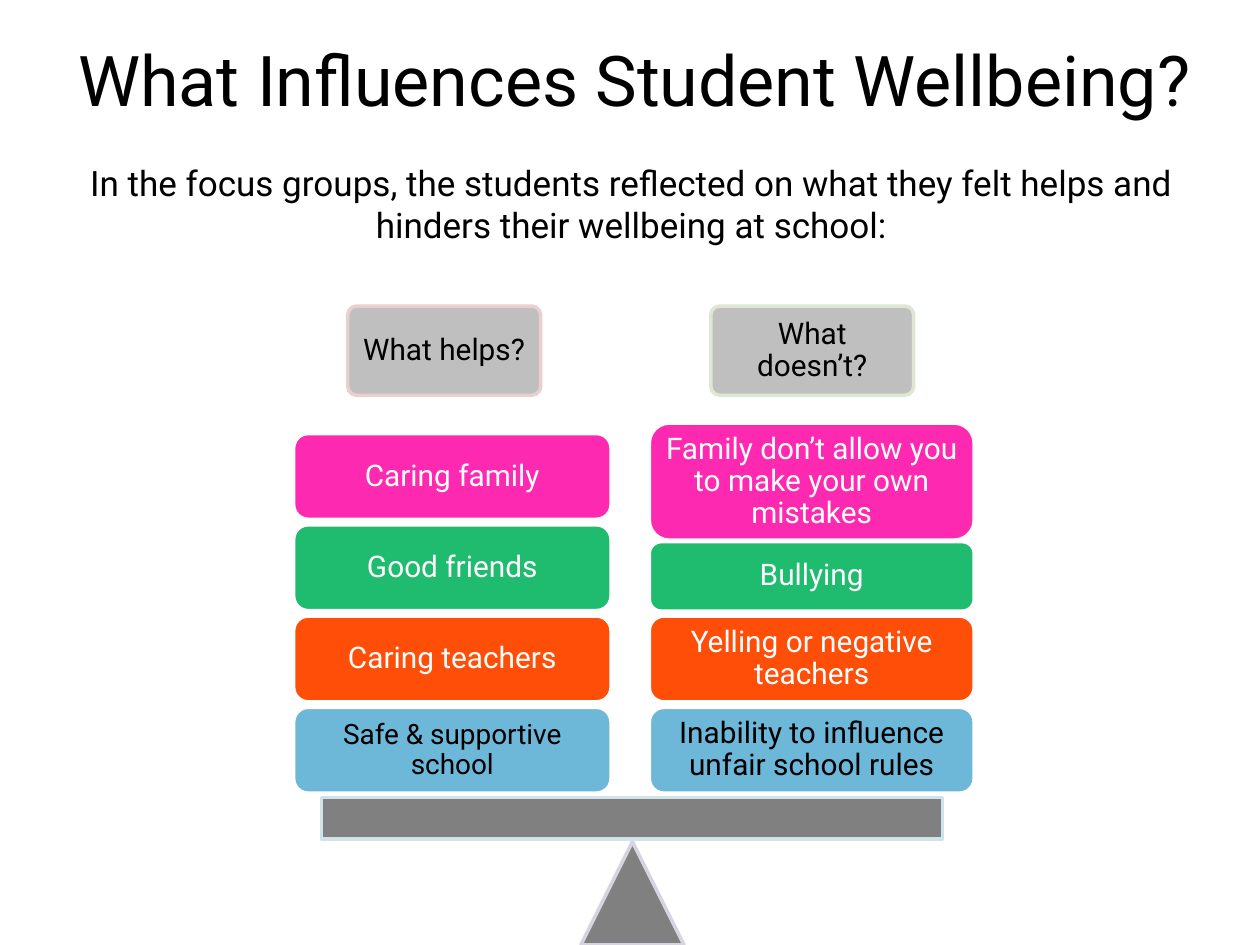
from pptx import Presentation
from pptx.dml.color import RGBColor
from pptx.enum.shapes import MSO_SHAPE
from pptx.enum.text import MSO_ANCHOR, MSO_AUTO_SIZE, PP_ALIGN
from pptx.util import Cm, Pt

BLACK = RGBColor(0x00, 0x00, 0x00)
WHITE = RGBColor(0xFF, 0xFF, 0xFF)
LIGHT_GREY = RGBColor(0xBF, 0xBF, 0xBF)
GREY = RGBColor(0x80, 0x80, 0x80)
PINK = RGBColor(0xFD, 0x29, 0xB1)
GREEN = RGBColor(0x1F, 0xBB, 0x6F)
ORANGE = RGBColor(0xFF, 0x4E, 0x08)
BLUE = RGBColor(0x6D, 0xB7, 0xD9)
ROSE_EDGE = RGBColor(0xE8, 0xD0, 0xD0)
OLIVE_EDGE = RGBColor(0xDE, 0xE7, 0xD1)
LILAC_EDGE = RGBColor(0xD8, 0xD3, 0xE0)
AQUA_EDGE = RGBColor(0xD0, 0xE3, 0xEA)

FRAME_FORMAT = {
    "word_wrap": True,
    "auto_size": MSO_AUTO_SIZE.NONE,
    "vertical_anchor": MSO_ANCHOR.MIDDLE,
}
CARD_MARGINS = {
    f"margin_{side}": Cm(0.18) for side in ("left", "top", "right", "bottom")
}

HELPS_LEFT, HELPS_WIDTH = 5.92, 6.4
HINDERS_LEFT, HINDERS_WIDTH = 13.09, 6.55
ROW_TOP, ROW_STEP, CARD_HEIGHT = 8.74, 1.84, 1.73

ROWS = [
    (PINK, WHITE, "Caring family", "Family don’t allow you to make your own mistakes"),
    (GREEN, WHITE, "Good friends", "Bullying"),
    (ORANGE, WHITE, "Caring teachers", "Yelling or negative teachers"),
    (BLUE, BLACK, "Safe & supportive school", "Inability to influence unfair school rules"),
]
HINDERS_SPANS = {0: (8.53, 2.36), 1: (10.92, 1.4)}
TEXT_SIZES = {"Safe & supportive school": 16}


def apply_format(target, values):
    for name, value in values.items():
        setattr(target, name, value)


def write_text(shape, text, size, color, line_spacing=1.0):
    frame = shape.text_frame
    apply_format(frame, FRAME_FORMAT)
    frame.text = text
    paragraph = frame.paragraphs[0]
    apply_format(paragraph, {
        "alignment": PP_ALIGN.CENTER,
        "line_spacing": line_spacing,
        "space_before": Pt(0),
    })
    font = paragraph.runs[0].font
    apply_format(font, {"name": "Roboto", "size": Pt(size), "bold": False})
    font.color.rgb = color


def fill_placeholder(placeholder, box, text, size):
    bounds = zip(("left", "top", "width", "height"), map(Cm, box))
    apply_format(placeholder, dict(bounds))
    write_text(placeholder, text, size, BLACK)


def add_block(slide, kind, box, fill, edge):
    shape = slide.shapes.add_shape(kind, *map(Cm, box))
    shape.shadow.inherit = False
    shape.fill.solid()
    shape.fill.fore_color.rgb = fill
    shape.line.color.rgb = edge
    shape.line.width = Pt(2)
    return shape


def add_card(slide, box, text, fill, edge, color, corner=0.17):
    card = add_block(slide, MSO_SHAPE.ROUNDED_RECTANGLE, box, fill, edge)
    card.adjustments[0] = corner
    apply_format(card.text_frame, CARD_MARGINS)
    write_text(card, text, TEXT_SIZES.get(text, 17), color, 0.9)


def add_headings(slide):
    for text, left, width, edge in (
        ("What helps?", 7.01, 3.89, ROSE_EDGE),
        ("What doesn’t?", 14.33, 4.09, OLIVE_EDGE),
    ):
        box = (left, 6.17, width, 1.8)
        add_card(slide, box, text, LIGHT_GREY, edge, BLACK, corner=0.1)


def add_seesaw(slide):
    add_block(slide, MSO_SHAPE.ISOSCELES_TRIANGLE, (11.71, 16.97, 2.08, 2.08), GREY, LILAC_EDGE)
    add_block(slide, MSO_SHAPE.RECTANGLE, (6.48, 16.08, 12.52, 0.84), GREY, AQUA_EDGE)


def add_influences(slide):
    for index, (fill, color, helps, hinders) in enumerate(ROWS):
        span = (ROW_TOP + index * ROW_STEP, CARD_HEIGHT)
        for left, width, text, (top, height) in (
            (HELPS_LEFT, HELPS_WIDTH, helps, span),
            (HINDERS_LEFT, HINDERS_WIDTH, hinders, HINDERS_SPANS.get(index, span)),
        ):
            add_card(slide, (left, top, width, height), text, fill, WHITE, color)


def main():
    presentation = Presentation()
    presentation.slide_width = Cm(25.4)
    presentation.slide_height = Cm(19.05)
    slide = presentation.slides.add_slide(presentation.slide_layouts[0])
    title, introduction = slide.placeholders
    fill_placeholder(title, (0.89, 0, 23.8, 3.18), "What Influences Student Wellbeing?", 40)
    fill_placeholder(
        introduction,
        (1.3, 2.51, 22.86, 3.18),
        "In the focus groups, the students reflected on what they felt helps and "
        "hinders their wellbeing at school:",
        20,
    )
    add_headings(slide)
    add_seesaw(slide)
    add_influences(slide)
    presentation.save("out.pptx")


if __name__ == "__main__":
    main()
